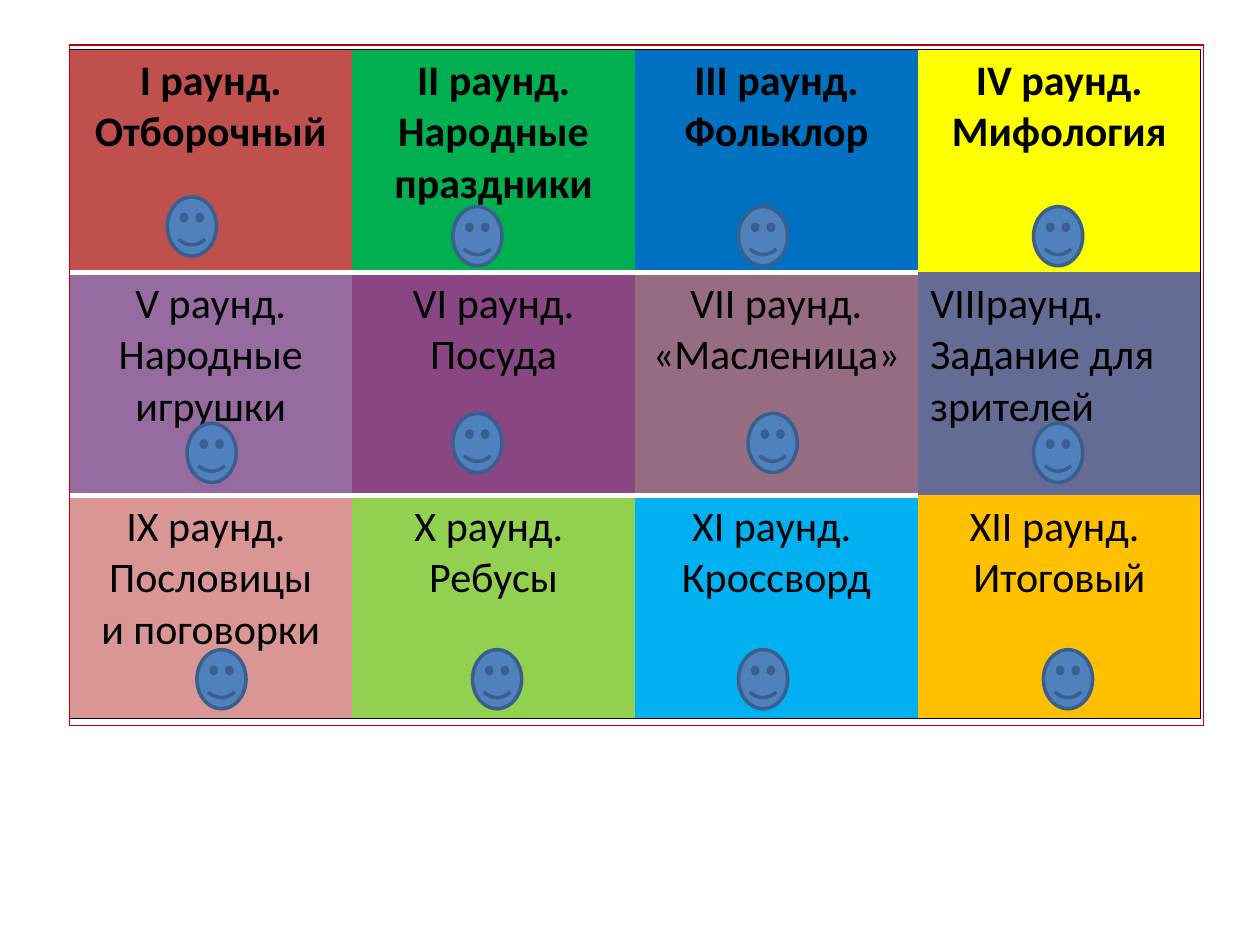
"""Build the game board slide: twelve round cells, each with a smiley button."""
from lxml import etree
from pptx import Presentation
from pptx.dml.color import RGBColor
from pptx.enum import shapes, text
from pptx.oxml import ns
from pptx.util import Pt

BLACK = RGBColor(0, 0, 0)
WHITE = RGBColor(255, 255, 255)
FRAME_RED = RGBColor(0xC0, 0, 0)
SMILEY_BLUE = RGBColor(0x4F, 0x81, 0xBD)
SMILEY_LINE = RGBColor(0x3A, 0x5F, 0x8C)
PLAIN_STYLE = "{2D5ABB26-0587-4C30-8999-92F81FD0307C}"

ROUNDS = [
    [("I раунд. Отборочный", "C0504D"),
     ("II раунд. Народные праздники", "00B050"),
     ("III раунд. Фольклор", "0070C0"),
     ("IV раунд.\nМифология", "FFFF00")],
    [("V раунд. Народные игрушки", "966CA0"),
     ("VI раунд. Посуда", "884683"),
     ("VII раунд. «Масленица»", "966C82"),
     ("VIIIраунд.\nЗадание для зрителей", "646C96")],
    [("IX раунд. \nПословицы\nи поговорки", "D99694"),
     ("X раунд. \nРебусы", "92D050"),
     ("XI раунд. \nКроссворд", "00B0F0"),
     ("XII раунд. \nИтоговый", "FFC000")],
]
LEFT_ALIGNED = (1, 3)
SMILEYS = [
    [(95.6, 112.5), (258.75, 118.1), (422, 118.1), (590.6, 118.1)],
    [(106.9, 241.9), (258.75, 236.25), (427.5, 236.25), (590.6, 241.9)],
    [(112.5, 371.25), (270, 371.25), (422, 371.25), (596.25, 371.25)],
]
SMILEY_SIZE = (28.1, 33.75)


def add_plain_table(slide, rows, columns, left, top, width, height):
    frame = slide.shapes.add_table(rows, columns, Pt(left), Pt(top), Pt(width), Pt(height))
    table = frame.table
    table.first_row = table.horz_banding = False
    frame._element.find(".//" + ns.qn("a:tableStyleId")).text = PLAIN_STYLE
    return table


def set_borders(cell, borders):
    properties = cell._tc.get_or_add_tcPr()
    for index, side in enumerate(side for side in "LRTB" if side in borders):
        color, width = borders[side]
        line = etree.Element(ns.qn(f"a:ln{side}"), w=str(Pt(width)))
        fill = etree.SubElement(line, ns.qn("a:solidFill"))
        etree.SubElement(fill, ns.qn("a:srgbClr"), val=str(color))
        properties.insert(index, line)


def board_borders(row, column):
    last_row, last_column = len(ROUNDS) - 1, len(ROUNDS[0]) - 1
    divider = (WHITE, 3)
    edges = {
        "L": (column == 0, (BLACK, 1)),
        "R": (column == last_column, (BLACK, 1)),
        "T": (row == 0, (BLACK, 1)),
        "B": (row == last_row, (BLACK, 1)),
    }
    borders = {side: line for side, (outer, line) in edges.items() if outer}
    if column < last_column and row < 2:
        borders.update({"B": divider} if row == 0 else {"T": divider})
    return borders


def fill_board(table):
    for row, rounds in enumerate(ROUNDS):
        for column, (label, color) in enumerate(rounds):
            cell = table.cell(row, column)
            cell.fill.solid()
            cell.fill.fore_color.rgb = RGBColor.from_string(color)
            set_borders(cell, board_borders(row, column))
            cell.text_frame.text = label
            left = (row, column) == LEFT_ALIGNED
            for paragraph in cell.text_frame.paragraphs:
                paragraph.alignment = text.PP_ALIGN.LEFT if left else text.PP_ALIGN.CENTER
                for run in paragraph.runs:
                    run.font.name = "Calibri"
                    run.font.size = Pt(24)
                    run.font.bold = row == 0
                    run.font.color.rgb = BLACK


def add_smiley(slide, left, top):
    width, height = SMILEY_SIZE
    smiley = slide.shapes.add_shape(
        shapes.MSO_SHAPE.SMILEY_FACE, Pt(left), Pt(top), Pt(width), Pt(height))
    smiley.shadow.inherit = False
    smiley.fill.solid()
    smiley.fill.fore_color.rgb = SMILEY_BLUE
    smiley.line.color.rgb = SMILEY_LINE
    smiley.line.width = Pt(2)


def main():
    presentation = Presentation()
    presentation.slide_width, presentation.slide_height = Pt(720), Pt(540)
    slide = presentation.slides.add_slide(presentation.slide_layouts[6])
    fill_board(add_plain_table(slide, 3, 4, 39.6, 28.3, 646.6, 382.3))
    frame = add_plain_table(slide, 1, 1, 39.6, 25.7, 648, 389)
    set_borders(frame.cell(0, 0), dict.fromkeys("LRTB", (FRAME_RED, 1)))
    for row in SMILEYS:
        for left, top in row:
            add_smiley(slide, left, top)
    presentation.save("out.pptx")


if __name__ == "__main__":
    main()
